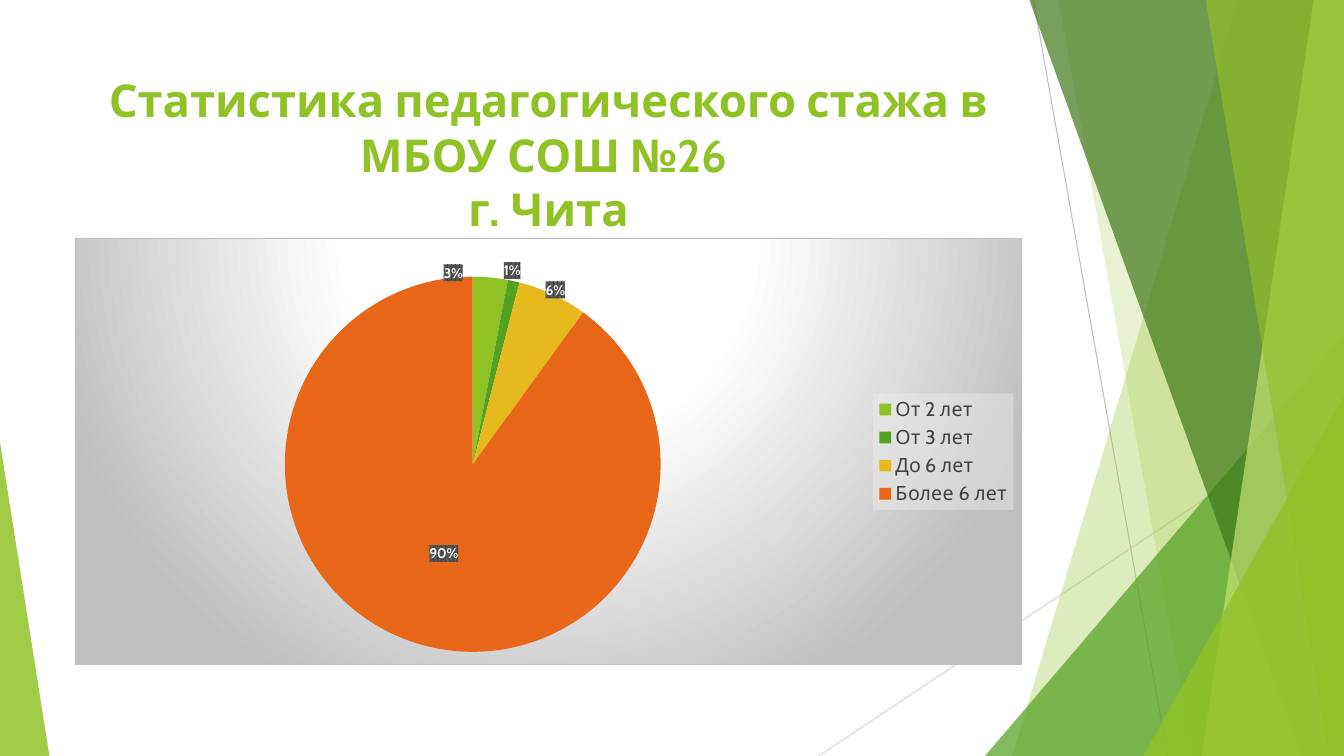
"""Build a slide with a pie chart of teaching experience in a school."""
import copy

import pptx
import pptx.chart.data
import pptx.dml.color
import pptx.enum.chart
import pptx.enum.shapes
import pptx.enum.text
import pptx.oxml
import pptx.oxml.ns
import pptx.util

Inches = pptx.util.Inches
Pt = pptx.util.Pt
RGBColor = pptx.dml.color.RGBColor
qn = pptx.oxml.ns.qn

LIME = RGBColor(0x90, 0xC2, 0x26)
GREEN = RGBColor(0x54, 0xA0, 0x21)
DARK_GREEN = RGBColor(0x3F, 0x78, 0x19)
PALE_LIME = RGBColor(0xC0, 0xE4, 0x74)
YELLOW = RGBColor(0xE6, 0xB9, 0x1E)
ORANGE = RGBColor(0xE7, 0x66, 0x18)
WHITE = RGBColor(0xFF, 0xFF, 0xFF)
BLACK = RGBColor(0, 0, 0)
CHARCOAL = RGBColor(0x40, 0x40, 0x40)
SILVER = RGBColor(0xBF, 0xBF, 0xBF)
LIGHT_GRAY = RGBColor(0xD9, 0xD9, 0xD9)

FONT = "Cabin"
WIDTH, HEIGHT = 13.33, 7.5
TITLE = "Статистика педагогического стажа в МБОУ СОШ №26 \vг. Чита"
TITLE_BOX = (0.74, 0.67, 9.4, 1.44)
CHART_BOX = (0.74, 2.36, 9.4, 4.24)
EXPERIENCE = [
    ("От 2 лет", 3, LIME),
    ("От 3 лет", 1, GREEN),
    ("До 6 лет", 6, YELLOW),
    ("Более 6 лет", 90, ORANGE),
]
LABEL_OFFSETS = [(-0.03, -0.23), (0.02, -0.24), (0.045, -0.21)]
PIE_LAYOUT = {"x": 0.22, "y": 0.09, "w": 0.4, "h": 0.88}

LINES = [
    ((10.25, 0), (11.58, HEIGHT), SILVER),
    ((WIDTH, 4.03), (8.12, HEIGHT), LIGHT_GRAY),
]
# Each band runs from its top left x to its bottom left x along the right edge.
DECORATIONS = [
    ("band", (12.28, 10.04), LIME, 30),
    ("band", (10.5, 11.83), LIME, 20),
    ("triangle", (9.77, 3.33, 3.56, 4.17, 1), GREEN, 72),
    ("band", (10.21, 12.91), DARK_GREEN, 70),
    ("band", (13.03, 11.92), PALE_LIME, 70),
    ("band", (11.96, 13.18), LIME, 65),
    ("triangle", (11.34, 3.93, 1.99, 3.57, 1), LIME, 80),
    ("triangle", (0, 4.39, 0.49, 3.11, 0), LIME, 85),
]
NAMESPACES = pptx.oxml.ns.nsdecls("c", "a")
LEGEND_FILL = '<a:solidFill><a:srgbClr val="F2F2F2"><a:alpha val="39000"/></a:srgbClr></a:solidFill>'
LABEL_FILL = (
    '<a:pattFill prst="pct75"><a:fgClr><a:srgbClr val="404040"/></a:fgClr>'
    '<a:bgClr><a:srgbClr val="595959"/></a:bgClr></a:pattFill>'
)
CHART_FILL = (
    '<a:gradFill><a:gsLst><a:gs pos="0"><a:srgbClr val="FFFFFF"/></a:gs>'
    '<a:gs pos="39000"><a:srgbClr val="FFFFFF"/></a:gs>'
    '<a:gs pos="100000"><a:srgbClr val="BFBFBF"/></a:gs></a:gsLst>'
    '<a:path path="circle"><a:fillToRect l="50000" t="-80000" r="50000" b="180000"/></a:path>'
    '</a:gradFill><a:ln w="9525"><a:solidFill><a:srgbClr val="BFBFBF"/></a:solidFill></a:ln>'
)


def chart_xml(tag, content):
    """Return a chart element with the given inner markup."""
    return pptx.oxml.parse_xml(f"<c:{tag} {NAMESPACES}>{content}</c:{tag}>")


def manual_layout(values, prefix=""):
    """Return a manual layout element."""
    content = "".join(f'<c:{key} val="{value}"/>' for key, value in values.items())
    return chart_xml("layout", f"<c:manualLayout>{prefix}{content}</c:manualLayout>")


def set_font(font, size, color, bold=False):
    """Format a font."""
    font.name = FONT
    font.size = Pt(size)
    font.bold = bold
    font.color.rgb = color


def add_line(slide, start, end, color):
    """Add a thin straight line."""
    line = slide.shapes.add_connector(
        pptx.enum.shapes.MSO_CONNECTOR.STRAIGHT, *map(Inches, start + end))
    line.line.color.rgb = color
    line.line.width = Pt(0.75)
    line._element.spPr.append(
        pptx.oxml.parse_xml(f"<a:effectLst {NAMESPACES}/>"))


def add_decoration(slide, kind, geometry, color, opacity):
    """Add one translucent band or triangle."""
    if kind == "band":
        top, bottom = geometry
        corners = [(WIDTH, 0), (WIDTH, HEIGHT), (bottom, HEIGHT)]
        builder = slide.shapes.build_freeform(Inches(top), 0)
        builder.add_line_segments([tuple(map(Inches, corner)) for corner in corners])
        shape = builder.convert_to_shape()
    else:
        shape = slide.shapes.add_shape(
            pptx.enum.shapes.MSO_SHAPE.ISOSCELES_TRIANGLE, *map(Inches, geometry[:4]))
        shape.adjustments[0] = geometry[4]
    shape.shadow.inherit = False
    shape.line.fill.background()
    shape.fill.solid()
    shape.fill.fore_color.rgb = color
    color_element = shape._element.spPr.find(qn("a:solidFill"))[0]
    color_element.append(pptx.oxml.parse_xml(
        f'<a:alpha {NAMESPACES} val="{opacity * 1000}"/>'))


def add_title(slide):
    """Fill and place the title placeholder."""
    title = slide.shapes.title
    title.left, title.top, title.width, title.height = map(Inches, TITLE_BOX)
    frame = title.text_frame
    frame.text = TITLE
    frame.word_wrap = True
    frame.auto_size = pptx.enum.text.MSO_AUTO_SIZE.NONE
    frame.vertical_anchor = pptx.enum.text.MSO_ANCHOR.TOP
    paragraph = frame.paragraphs[0]
    paragraph.alignment = pptx.enum.text.PP_ALIGN.CENTER
    for run in paragraph.runs:
        set_font(run.font, 32.4, LIME, True)


def format_labels(series):
    """Show percentages and move the labels of the small slices."""
    labels = series.data_labels
    labels.show_percentage = True
    labels.show_value = False
    labels.number_format = "0%"
    labels.number_format_is_linked = False
    labels.position = pptx.enum.chart.XL_LABEL_POSITION.CENTER
    set_font(labels.font, 10, WHITE, True)
    element = labels._element
    element.find(qn("c:txPr")).addprevious(chart_xml("spPr", LABEL_FILL))
    leader = element.find(qn("c:showLeaderLines"))
    if leader is not None:
        leader.set("val", "0")
    shared = [child for child in element if child is not leader]
    for index, (x, y) in enumerate(LABEL_OFFSETS):
        label = chart_xml("dLbl", f'<c:idx val="{index}"/>')
        label.append(manual_layout({"x": x, "y": y}))
        label.extend(copy.deepcopy(child) for child in shared)
        element.insert(index, label)


def add_pie(slide):
    """Add the pie chart with its legend."""
    data = pptx.chart.data.CategoryChartData()
    data.categories = [name for name, value, color in EXPERIENCE]
    data.add_series("Series 1", [value for name, value, color in EXPERIENCE])
    chart = slide.shapes.add_chart(
        pptx.enum.chart.XL_CHART_TYPE.PIE, *map(Inches, CHART_BOX), data).chart
    chart.has_title = False
    set_font(chart.font, 10, BLACK)
    chart.has_legend = True
    legend = chart.legend
    legend.position = pptx.enum.chart.XL_LEGEND_POSITION.RIGHT
    legend.include_in_layout = False
    set_font(legend.font, 14, CHARCOAL)
    legend._element.find(qn("c:txPr")).addprevious(chart_xml("spPr", LEGEND_FILL))

    plot = chart.plots[0]
    plot.vary_by_categories = True
    series = plot.series[0]
    for index, (name, value, color) in enumerate(EXPERIENCE):
        point = series.points[index].format
        point.fill.solid()
        point.fill.fore_color.rgb = color
        point.line.fill.background()
    format_labels(series)

    chart_element = chart._chartSpace.find(qn("c:chart"))
    chart_element.addnext(chart_xml("spPr", CHART_FILL))
    plot_area = chart_element.find(qn("c:plotArea"))
    for layout in plot_area.findall(qn("c:layout")):
        plot_area.remove(layout)
    modes = ('<c:layoutTarget val="inner"/><c:xMode val="edge"/><c:yMode val="edge"/>')
    plot_area.insert(0, manual_layout(PIE_LAYOUT, modes))


def main():
    """Build and save the presentation."""
    presentation = pptx.Presentation()
    presentation.slide_width = Inches(WIDTH)
    presentation.slide_height = Inches(HEIGHT)
    slide = presentation.slides.add_slide(presentation.slide_layouts[5])
    for line in LINES:
        add_line(slide, *line)
    for decoration in DECORATIONS:
        add_decoration(slide, *decoration)
    add_title(slide)
    add_pie(slide)
    presentation.save("out.pptx")


if __name__ == "__main__":
    main()
